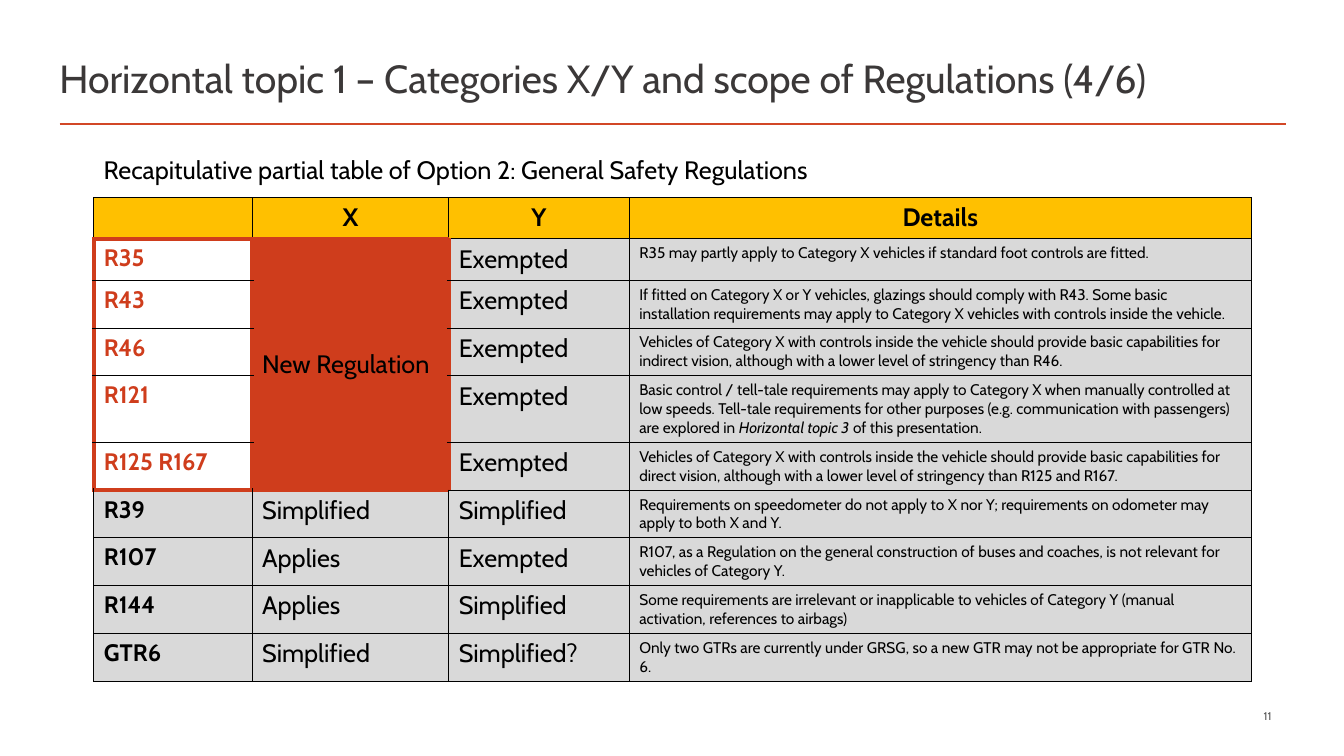
from dataclasses import dataclass
from itertools import product

from lxml import etree
from pptx import Presentation
from pptx.dml.color import RGBColor
from pptx.enum.shapes import MSO_CONNECTOR
from pptx.enum.text import MSO_ANCHOR as Anchor, PP_ALIGN as Align
from pptx.oxml.ns import qn
from pptx.slide import Slide
from pptx.table import _Cell as Cell
from pptx.text.text import _Paragraph as Paragraph
from pptx.util import Inches, Pt

WIDTH, HEIGHT = Inches(13.33), Inches(7.5)
FONT = "Cabin"
COLOURS = {
    "ink": "000000", "title": "3B3838", "number": "595959", "rule": "D24726",
    "red": "CF3D1C", "gold": "FFC000", "grey": "D9D9D9", "white": "FFFFFF",
}


@dataclass(frozen=True)
class Style:
    size: float
    colour: str = "ink"
    bold: bool = False
    align: Align = Align.LEFT


@dataclass(frozen=True)
class Label:
    """Text with its place in percent of the slide."""
    text: str
    left: float
    top: float
    width: float
    height: float
    style: Style
    anchor: Anchor = Anchor.TOP
    margin: float = 0.05


@dataclass(frozen=True)
class Regulation:
    name: str
    x: str
    y: str
    details: str  # asterisks enclose italics


LABELS = [
    Label("Horizontal topic 1 – Categories X/Y and scope of Regulations (4/6)",
          3.68, 6.27, 91.97, 8.13, Style(28, "title"), Anchor.MIDDLE),
    Label("11", 68.49, 93.73, 26.86, 2, Style(8, "number", align=Align.RIGHT),
          Anchor.MIDDLE, 0),
    Label("Recapitulative partial table of Option 2: General Safety Regulations",
          6.98, 19.73, 85.22, 5.33, Style(18)),
]
HEADER = Regulation("", "X", "Y", "Details")
REGULATIONS = [
    Regulation("R35", "New Regulation", "Exempted",
               "R35 may partly apply to Category X vehicles if standard foot controls are fitted."),
    Regulation("R43", "", "Exempted",
               "If fitted on Category X or Y vehicles, glazings should comply with R43. Some basic "
               "installation requirements may apply to Category X vehicles with controls inside the "
               "vehicle."),
    Regulation("R46", "", "Exempted",
               "Vehicles of Category X with controls inside the vehicle should provide basic "
               "capabilities for indirect vision, although with a lower level of stringency than R46."),
    Regulation("R121", "", "Exempted",
               "Basic control / tell-tale requirements may apply to Category X when manually "
               "controlled at low speeds. Tell-tale requirements for other purposes (e.g. "
               "communication with passengers) are explored in *Horizontal topic 3* of this "
               "presentation."),
    Regulation("R125 R167", "", "Exempted",
               "Vehicles of Category X with controls inside the vehicle should provide basic "
               "capabilities for direct vision, although with a lower level of stringency than R125 "
               "and R167."),
    Regulation("R39", "Simplified", "Simplified",
               "Requirements on speedometer do not apply to X nor Y; requirements on odometer may "
               "apply to both X and Y."),
    Regulation("R107", "Applies", "Exempted",
               "R107, as a Regulation on the general construction of buses and coaches, is not "
               "relevant for vehicles of Category Y."),
    Regulation("R144", "Applies", "Simplified",
               "Some requirements are irrelevant or inapplicable to vehicles of Category Y (manual "
               "activation, references to airbags)"),
    Regulation("GTR6", "Simplified", "Simplified?",
               "Only two GTRs are currently under GRSG, so a new GTR may not be appropriate for GTR "
               "No. 6."),
]
FIRST_NEW, LAST_NEW = 1, 5  # rows covered by the new regulation
COLUMN_WIDTHS = [11.78, 14.63, 13.43, 46.29]
ROW_HEIGHT, LAST_NEW_HEIGHT = 5.47, 6.13
TABLE_HEIGHT = 65.47


def across(percent: float) -> int:
    return round(WIDTH * percent / 100)


def down(percent: float) -> int:
    return round(HEIGHT * percent / 100)


def rgb(colour: str) -> RGBColor:
    return RGBColor.from_string(COLOURS[colour])


def write(para: Paragraph, text: str, style: Style) -> None:
    """Fill a paragraph, setting what stands between asterisks in italics."""
    first, *others = text.split("*")
    para.text = first
    for part in others:
        para.add_run().text = part
    para.alignment = style.align
    for index, span in enumerate(para.runs):
        font = span.font
        font.name, font.size, font.bold = FONT, Pt(style.size), style.bold
        font.italic = index % 2 == 1
        font.color.rgb = rgb(style.colour)


def add_label(page: Slide, label: Label) -> None:
    box = page.shapes.add_textbox(across(label.left), down(label.top),
                                  across(label.width), down(label.height))
    frame = box.text_frame
    frame.word_wrap = True
    frame.vertical_anchor = label.anchor
    frame.margin_top = frame.margin_bottom = Inches(label.margin)
    write(frame.paragraphs[0], label.text, label.style)


def add_rule(page: Slide) -> None:
    rule = page.shapes.add_connector(MSO_CONNECTOR.STRAIGHT, across(4.43), down(16.4),
                                     across(95.65), down(16.4))
    rule.line.color.rgb = rgb("rule")
    rule.line.width = Pt(2)
    etree.SubElement(rule._element.spPr, qn("a:effectLst"))


def is_new(row: int) -> bool:
    return FIRST_NEW <= row <= LAST_NEW


def is_red_upright(row: int, edge: int) -> bool:
    return is_new(row) and edge <= 2


def is_red_level(edge: int, column: int) -> bool:
    outline = edge in (FIRST_NEW, LAST_NEW + 1)
    return column == 1 and is_new(edge) or column < 2 and outline


def set_borders(cell: Cell, row: int, column: int) -> None:
    red_sides = {
        "a:lnL": is_red_upright(row, column),
        "a:lnR": is_red_upright(row, column + 1),
        "a:lnT": is_red_level(row, column),
        "a:lnB": is_red_level(row + 1, column),
    }
    properties = cell._tc.get_or_add_tcPr()
    for index, (side, red) in enumerate(red_sides.items()):
        line = etree.Element(qn(side), w=str(Pt(3 if red else 0.75)))
        fill = etree.SubElement(line, qn("a:solidFill"))
        etree.SubElement(fill, qn("a:srgbClr"), val=COLOURS["red" if red else "ink"])
        properties.insert(index, line)


def cell_look(row: int, column: int) -> tuple[str, Style]:
    """Return the fill and text style of a cell."""
    if row == 0:
        return "gold", Style(18, bold=True, align=Align.CENTER)
    if column == 0:
        return ("white", Style(17, "red", True)) if is_new(row) else ("grey", Style(17, bold=True))
    fill = "red" if column == 1 and is_new(row) else "grey"
    return fill, Style(11 if column == 3 else 18)


def add_regulations(page: Slide) -> None:
    entries = [HEADER, *REGULATIONS]
    frame = page.shapes.add_table(len(entries), len(COLUMN_WIDTHS), across(6.98), down(26.13),
                                  across(sum(COLUMN_WIDTHS)), down(TABLE_HEIGHT))
    table = frame.table
    table.first_row = table.horz_banding = False
    for column, width in zip(table.columns, COLUMN_WIDTHS):
        column.width = across(width)
    for index, row in enumerate(table.rows):
        row.height = down(LAST_NEW_HEIGHT if index == LAST_NEW else ROW_HEIGHT)
    frame.height = down(TABLE_HEIGHT)
    for row, column in product(range(len(entries)), range(len(COLUMN_WIDTHS))):
        entry, cell = entries[row], table.cell(row, column)
        text = (entry.name, entry.x, entry.y, entry.details)[column]
        fill, style = cell_look(row, column)
        cell.fill.solid()
        cell.fill.fore_color.rgb = rgb(fill)
        set_borders(cell, row, column)
        if text:
            write(cell.text_frame.paragraphs[0], text, style)
    new_regulation = table.cell(FIRST_NEW, 1)
    new_regulation.merge(table.cell(LAST_NEW, 1))
    new_regulation.vertical_anchor = Anchor.MIDDLE


def main() -> None:
    deck = Presentation()
    deck.slide_width, deck.slide_height = WIDTH, HEIGHT
    page = deck.slides.add_slide(deck.slide_layouts[6])
    add_rule(page)
    add_regulations(page)
    for label in LABELS:
        add_label(page, label)
    deck.save("out.pptx")


if __name__ == "__main__":
    main()
